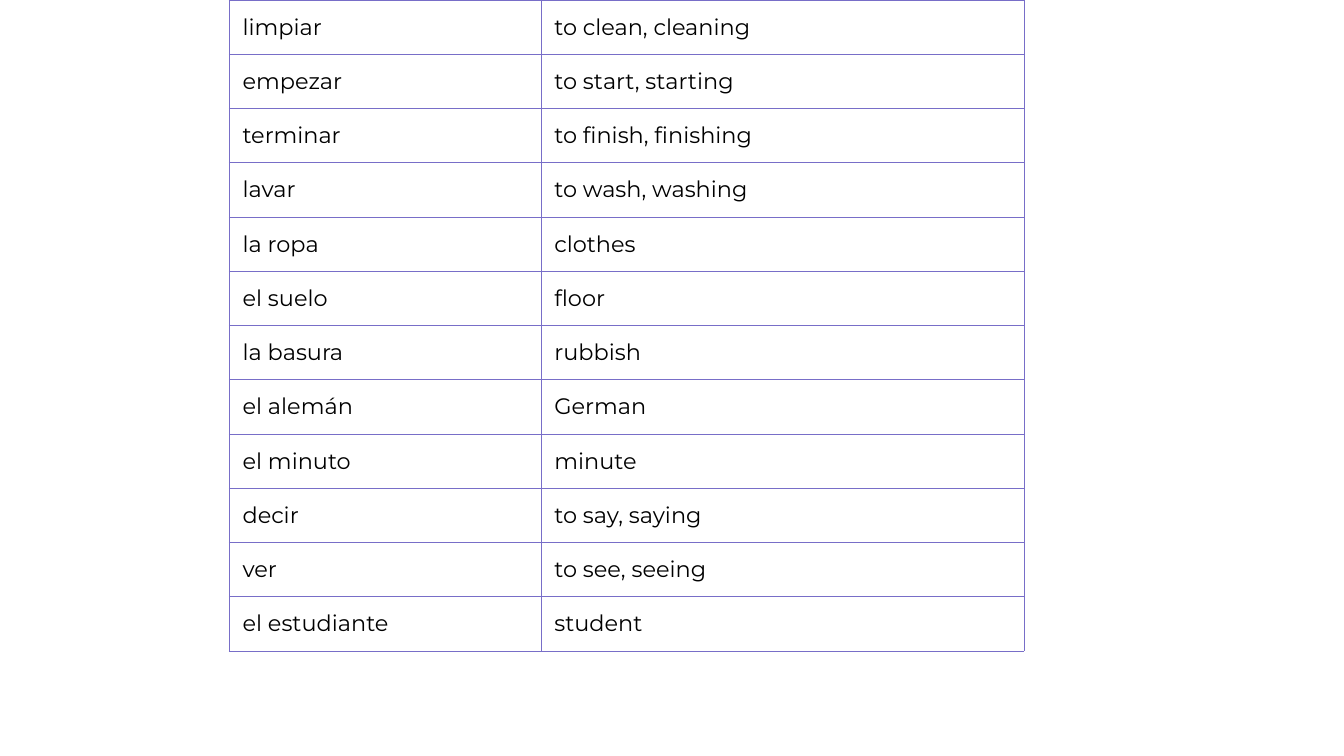
"""Build a slide with a Spanish-English vocabulary table."""
from lxml import etree
from pptx import Presentation
from pptx.dml.color import RGBColor
from pptx.oxml import ns
from pptx.util import Inches, Pt

BLACK = RGBColor(0x00, 0x00, 0x00)
PURPLE = RGBColor(0x78, 0x6E, 0xC8)

WORDS = [
    ("limpiar", "to clean, cleaning"),
    ("empezar", "to start, starting"),
    ("terminar", "to finish, finishing"),
    ("lavar", "to wash, washing"),
    ("la ropa", "clothes"),
    ("el suelo", "floor"),
    ("la basura", "rubbish"),
    ("el alemán", "German"),
    ("el minuto", "minute"),
    ("decir", "to say, saying"),
    ("ver", "to see, seeing"),
    ("el estudiante", "student"),
]
COL_WIDTHS = [4.64, 7.19]
ROW_HEIGHT = 0.73


def write(tf, content, size=24, font="Montserrat", color=BLACK):
    r = tf.paragraphs[0].add_run()
    r.text = content
    r.font.size = Pt(size)
    r.font.name = font
    r.font.color.rgb = color


def add_borders(cell, color=PURPLE, width=0.75):
    tc_pr = cell._tc.get_or_add_tcPr()
    for i, side in enumerate(("lnL", "lnR", "lnT", "lnB")):
        ln = etree.Element(ns.qn(f"a:{side}"), w=str(Pt(width)))
        fill = etree.SubElement(ln, ns.qn("a:solidFill"))
        etree.SubElement(fill, ns.qn("a:srgbClr"), val=str(color))
        tc_pr.insert(i, ln)


prs = Presentation()
prs.slide_width = Inches(20)
prs.slide_height = Inches(11.25)
s = prs.slides.add_slide(prs.slide_layouts[6])

sp = s.shapes.add_table(len(WORDS), len(COL_WIDTHS), Inches(3.41), Inches(0),
                        Inches(sum(COL_WIDTHS)), Inches(ROW_HEIGHT * len(WORDS)))
table = sp.table
table.first_row = False
table.horz_banding = False
for col, width in zip(table.columns, COL_WIDTHS):
    col.width = Inches(width)

for row, pair in zip(table.rows, WORDS):
    row.height = Inches(ROW_HEIGHT)
    for cell, word in zip(row.cells, pair):
        cell.margin_left = cell.margin_right = Inches(0.2)
        cell.margin_top = cell.margin_bottom = Inches(0.2)
        cell.fill.background()
        add_borders(cell)
        write(cell.text_frame, word)
table.rows[0].height = Inches(0.75)

prs.save("out.pptx")
